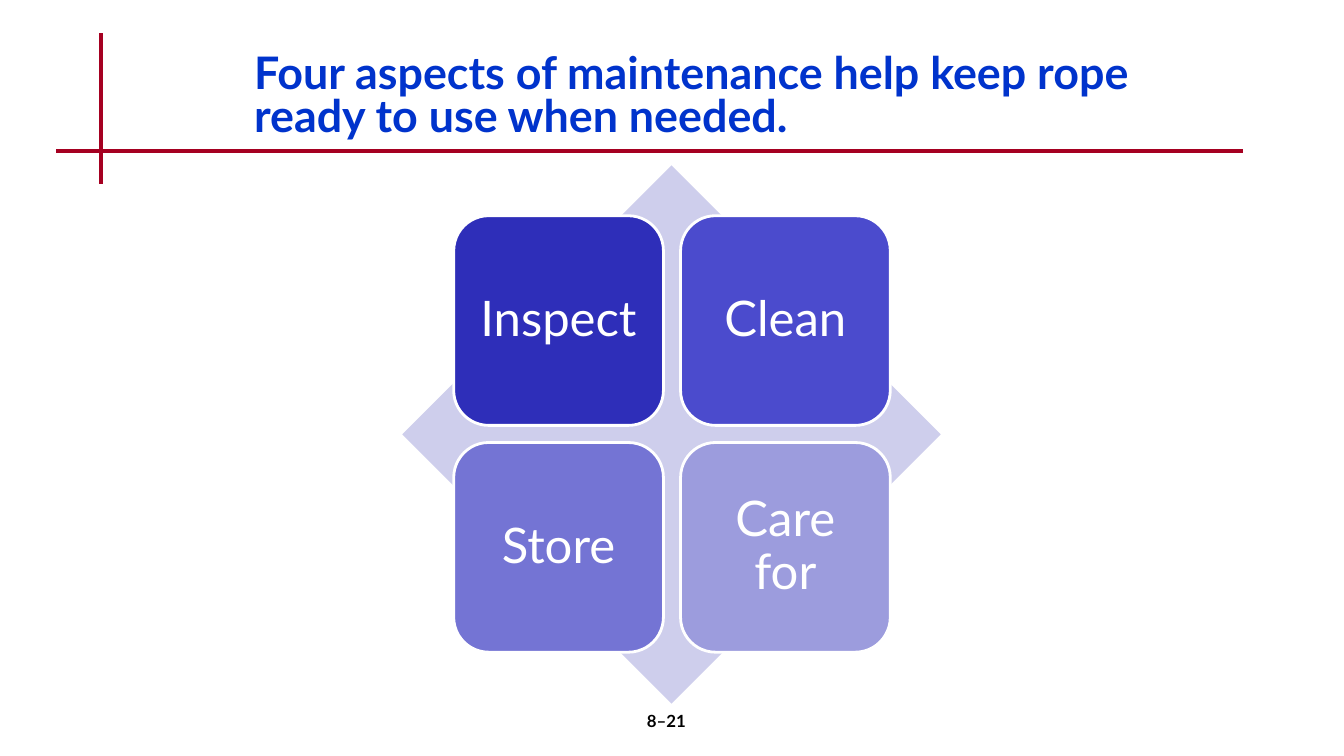
from pptx import Presentation
from pptx import util as u
from pptx.dml.color import RGBColor
from pptx.enum import shapes, text
from pptx.oxml.ns import qn
from lxml import etree

HUES = {"rule": "A50021", "title": "0033CC", "back": "CECEEC",
        "white": "FFFFFF", "black": "000000",
        "Inspect": "2E2EB9", "Clean": "4B4BCD",
        "Store": "7474D4", "Care for": "9C9CDD"}


class Deck:
    font = "Lato"

    def __init__(self):
        self.prs = Presentation()
        self.prs.slide_width = u.Inches(13.33)
        self.prs.slide_height = u.Inches(7.5)
        self.slide = self.prs.slides.add_slide(self.prs.slide_layouts[5])

    def hue(self, name):
        return RGBColor.from_string(HUES[name])

    def label(self, frame, words, size, hue, align, bold=False, space=1.0,
              inset=(0.1, 0.05), anchor=text.MSO_ANCHOR.TOP):
        frame.word_wrap = True
        frame.auto_size = text.MSO_AUTO_SIZE.NONE
        frame.vertical_anchor = anchor
        frame.margin_left = frame.margin_right = u.Inches(inset[0])
        frame.margin_top = frame.margin_bottom = u.Inches(inset[1])
        par = frame.paragraphs[0]
        par.alignment = align
        par.line_spacing = space
        run = par.add_run()
        run.text = words
        run.font.name = self.font
        run.font.size = u.Pt(size)
        run.font.bold = bold
        run.font.color.rgb = self.hue(hue)

    def title(self, words, *box):
        head = self.slide.shapes.title
        head.left, head.top, head.width, head.height = map(u.Inches, box)
        self.label(head.text_frame, words, 32, "title", text.PP_ALIGN.LEFT,
                   bold=True, space=0.8)

    def rule(self, *ends):
        line = self.slide.shapes.add_connector(
            shapes.MSO_CONNECTOR.STRAIGHT, *map(u.Inches, ends))
        line.line.color.rgb = self.hue("rule")
        line.line.width = u.Pt(3)
        etree.SubElement(line._element.spPr, qn("a:effectLst"))

    def shape(self, kind, hue, *box):
        item = self.slide.shapes.add_shape(kind, *map(u.Inches, box))
        item.shadow.inherit = False
        item.fill.solid()
        item.fill.fore_color.rgb = self.hue(hue)
        item.line.fill.background()
        return item

    def tile(self, words, *box):
        item = self.shape(shapes.MSO_SHAPE.ROUNDED_RECTANGLE, words, *box)
        item.line.color.rgb = self.hue("white")
        item.line.width = u.Pt(2)
        self.label(item.text_frame, words, 35, "white", text.PP_ALIGN.CENTER,
                   space=0.9, inset=(0.15, 0.15),
                   anchor=text.MSO_ANCHOR.MIDDLE)

    def note(self, words, *box):
        item = self.slide.shapes.add_textbox(*map(u.Inches, box))
        self.label(item.text_frame, words, 12, "black", text.PP_ALIGN.CENTER,
                   bold=True)


def main():
    deck = Deck()

    # Crossed rules and title
    deck.rule(1, 0.33, 1, 1.83)
    deck.rule(0.56, 1.5, 12.33, 1.5)
    deck.title("Four aspects of maintenance help keep rope "
               "ready to use when needed.", 2.42, 0.5, 9.25, 1)

    # Diamond with a two by two grid of tiles
    deck.shape(shapes.MSO_SHAPE.DIAMOND, "back", 3.99, 1.64, 5.34, 5.34)
    side, step = 2.08, 2.25
    for i, name in enumerate(["Inspect", "Clean", "Store", "Care for"]):
        row, col = divmod(i, 2)
        deck.tile(name, 4.5 + col * step, 2.14 + row * step, side, side)

    # Page number
    deck.note("8–21", 5.22, 7, 2.78, 0.5)

    deck.prs.save("out.pptx")


if __name__ == "__main__":
    main()
